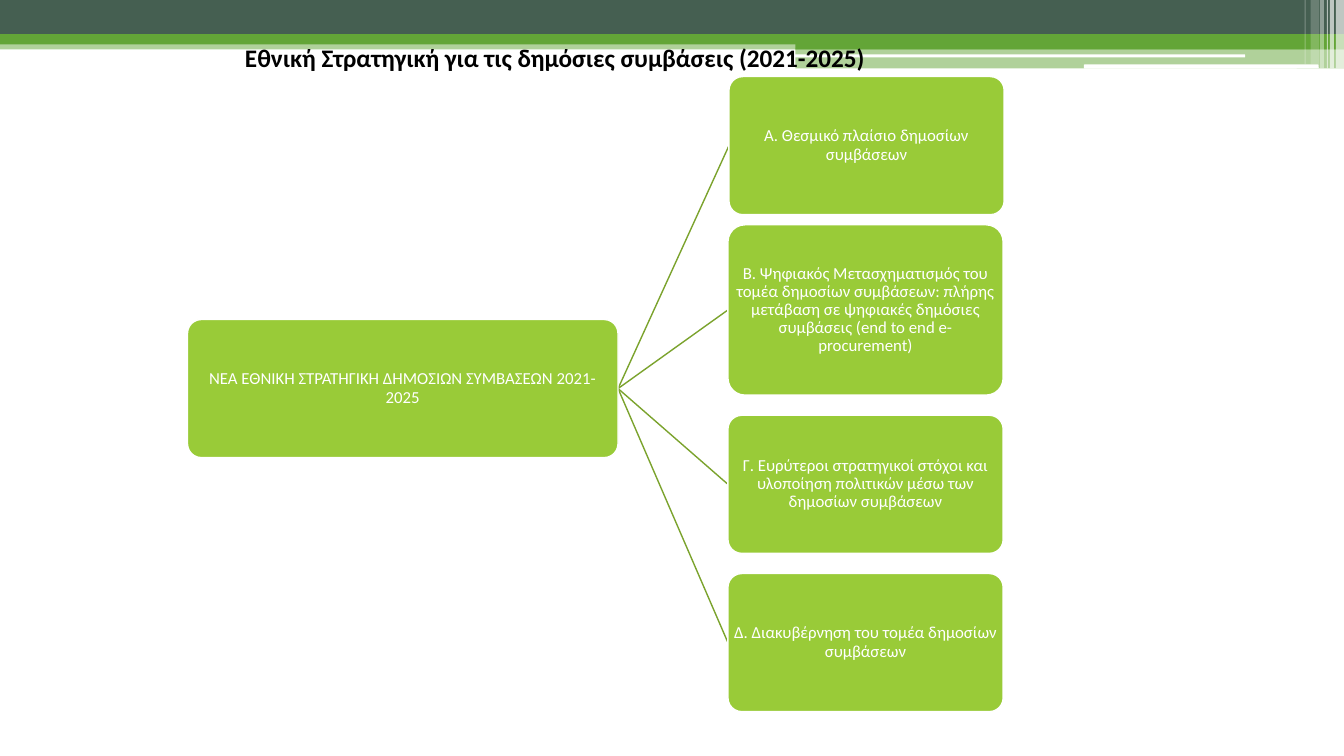
"""Build a slide showing the four pillars of the public procurement strategy."""
from lxml import etree
from pptx import Presentation
from pptx.dml.color import RGBColor
from pptx.enum.shapes import MSO_CONNECTOR, MSO_SHAPE
from pptx.enum.text import MSO_ANCHOR, MSO_AUTO_SIZE, PP_ALIGN
from pptx.oxml.ns import qn
from pptx.util import Inches, Pt

RECTANGLE = MSO_SHAPE.RECTANGLE
ROUNDED = MSO_SHAPE.ROUNDED_RECTANGLE
STRAIGHT = MSO_CONNECTOR.STRAIGHT
MIDDLE = MSO_ANCHOR.MIDDLE
NO_AUTOFIT = MSO_AUTO_SIZE.NONE
LEFT, CENTER = PP_ALIGN.LEFT, PP_ALIGN.CENTER

COLORS = {
    "slate": "455F51",
    "green": "63A537",
    "lime": "99CB38",
    "olive": "7BA32D",
    "white": "FFFFFF",
    "black": "000000",
}

deck = Presentation()
deck.slide_width = Inches(13.33)
deck.slide_height = Inches(7.5)
page = deck.slides.add_slide(deck.slide_layouts[5])


def add_block(kind, area, color, opacity=100):
    """Add a filled shape without outline or shadow."""
    block = page.shapes.add_shape(kind, *[Inches(length) for length in area])
    block.shadow.inherit = False
    block.fill.solid()
    block.fill.fore_color.rgb = RGBColor.from_string(COLORS[color])
    block.line.fill.background()
    if opacity < 100:
        tint = next(block.element.iter(qn("a:srgbClr")))
        etree.SubElement(tint, qn("a:alpha"), val=str(opacity * 1000))
    return block


def write_text(box, text, align, margin, font_format):
    """Write one formatted paragraph, centred vertically in the box."""
    frame = box.text_frame
    frame.text = text
    frame_format = {"word_wrap": True, "auto_size": NO_AUTOFIT, "vertical_anchor": MIDDLE}
    for side in ("left", "right", "top", "bottom"):
        frame_format[f"margin_{side}"] = Inches(margin)
    for name, value in frame_format.items():
        setattr(frame, name, value)
    para = frame.paragraphs[0]
    para.alignment = align
    span = para.runs[0]
    span.font.name = "Calibri"
    span.font.color.rgb = RGBColor.from_string(COLORS[font_format["color"]])
    span.font.size = Pt(font_format["size"])
    span.font.bold = font_format["bold"]
    return para


header_bands = [
    (RECTANGLE, (0, 0.4, 13.33, 0.09), "green", 50),
    (RECTANGLE, (0, 0, 13.33, 0.34), "slate", 100),
    (RECTANGLE, (0, 0.34, 13.33, 0.1), "green", 100),
    (RECTANGLE, (7.89, 0.39, 5.44, 0.1), "green", 100),
    (RECTANGLE, (7.89, 0.48, 5.44, 0.2), "green", 50),
    (ROUNDED, (7.88, 0.54, 4.47, 0.03), "white", 100),
    (ROUNDED, (10.75, 0.64, 2.33, 0.04), "white", 100),
]
for kind, area, color, opacity in header_bands:
    add_block(kind, area, color, opacity)

corner_stripes = [
    (13.25, 0.08, 0.68, 65),
    (13.19, 0.04, 0.68, 65),
    (13.16, 0.01, 0.68, 60),
    (13.09, 0.04, 0.68, 40),
    (13, 0.08, 0.64, 20),
    (12.94, 0.01, 0.64, 30),
]
for left, width, height, opacity in corner_stripes:
    add_block(RECTANGLE, (left, 0, width, height), "white", opacity)

title = page.shapes.title
title.left, title.top = Inches(2.33), Inches(0.13)
title.width, title.height = Inches(8.66), Inches(0.87)
write_text(title, "Εθνική Στρατηγική για τις δημόσιες συμβάσεις (2021-2025)", LEFT, 0.1,
           {"color": "black", "size": 18, "bold": True})
title.element.getparent().append(title.element)

strategy = ((1.86, 3.17, 4.27, 1.37), "ΝΕΑ ΕΘΝΙΚΗ ΣΤΡΑΤΗΓΙΚΗ ΔΗΜΟΣΙΩΝ ΣΥΜΒΑΣΕΩΝ 2021-2025")
pillars = [
    ((7.23, 0.76, 2.73, 1.37), "Α. Θεσμικό πλαίσιο δημοσίων συμβάσεων"),
    ((7.22, 2.23, 2.73, 1.69),
     "Β. Ψηφιακός Μετασχηματισμός του τομέα δημοσίων συμβάσεων: πλήρης "
     "μετάβαση σε ψηφιακές δημόσιες συμβάσεις (end to end e-procurement)"),
    ((7.22, 4.12, 2.73, 1.37),
     "Γ. Ευρύτεροι στρατηγικοί στόχοι και υλοποίηση πολιτικών μέσω των δημοσίων συμβάσεων"),
    ((7.22, 5.69, 2.73, 1.37), "Δ. Διακυβέρνηση του τομέα δημοσίων συμβάσεων"),
]

root_left, root_top, root_width, root_height = strategy[0]
for (left, top, width, height), label in pillars:
    branch = page.shapes.add_connector(
        STRAIGHT,
        Inches(root_left + root_width), Inches(root_top + root_height / 2),
        Inches(left), Inches(top + height / 2))
    branch.line.color.rgb = RGBColor.from_string(COLORS["olive"])
    branch.line.width = Pt(1)
    etree.SubElement(branch.element.spPr, qn("a:effectLst"))

for area, label in [strategy, *pillars]:
    box = add_block(ROUNDED, area, "lime")
    box.adjustments[0] = 0.1
    box.line.color.rgb = RGBColor.from_string(COLORS["white"])
    box.line.width = Pt(1)
    para = write_text(box, label, CENTER, 0.01,
                      {"color": "white", "size": 12, "bold": False})
    para.line_spacing = 0.9

deck.save("out.pptx")
